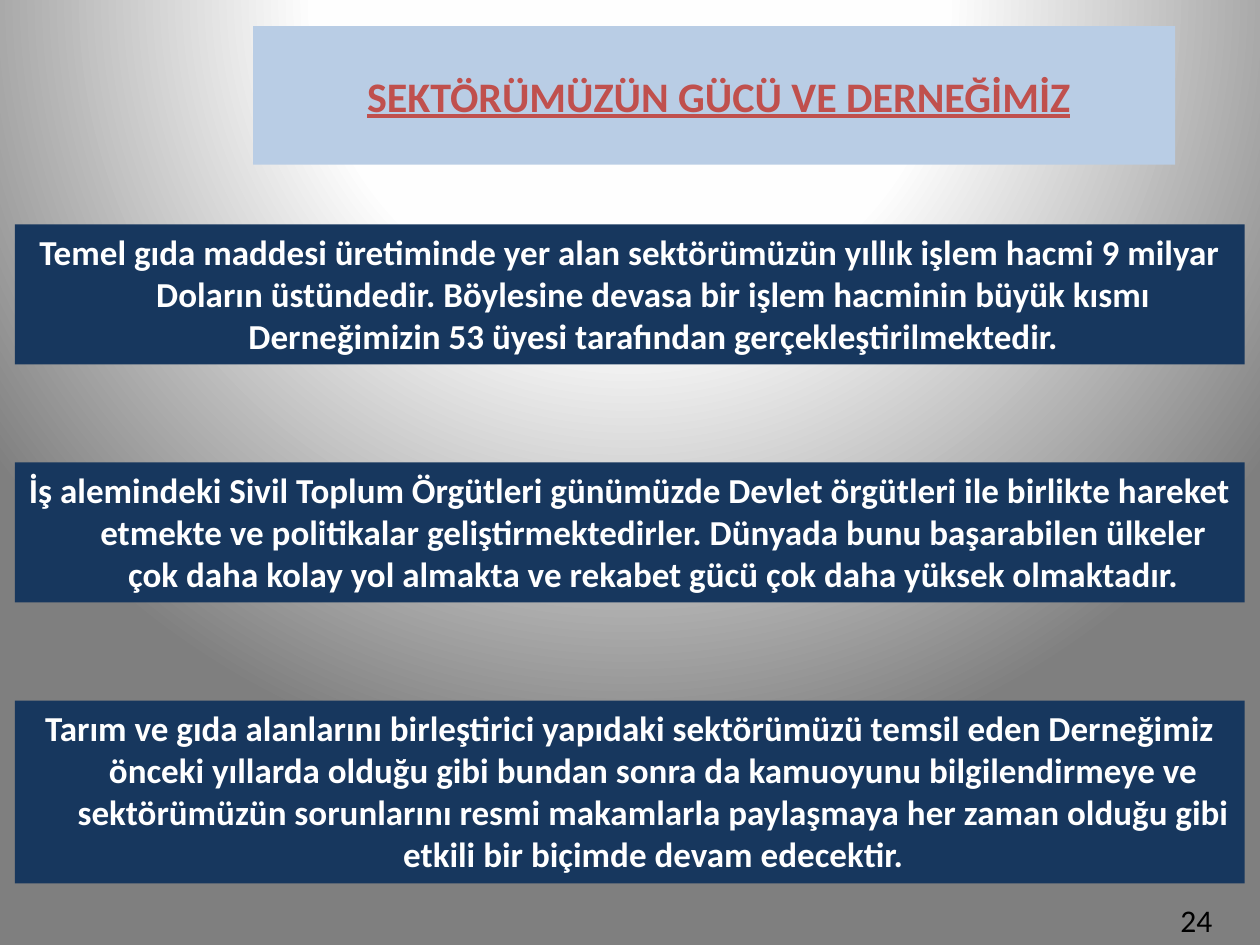
from typing import NamedTuple

from pptx import Presentation
from pptx.dml.color import RGBColor
from pptx.enum.shapes import MSO_SHAPE
from pptx.enum.text import MSO_ANCHOR, MSO_AUTO_SIZE, PP_ALIGN
from pptx.oxml import parse_xml
from pptx.oxml.ns import nsdecls
from pptx.util import Pt

COLORS = {
    "banner": "B9CDE5",
    "heading": "C0504D",
    "panel": "17375E",
    "panel_text": "FFFFFF",
    "number": "000000",
}
BACKDROP_STOPS = [(0, "FFFFFF"), (40, "FEFEFE"), (100, "7F7F7F")]
PANEL_LEFT, PANEL_TOP, PANEL_WIDTH, PANEL_STEP = 8.5, 128.2, 702.7, 136.1
HANGING_INDENT = 27


class Panel(NamedTuple):
    statement: str
    height: float


PANELS = [
    Panel("Temel gıda maddesi üretiminde yer alan sektörümüzün yıllık işlem hacmi "
          "9 milyar Doların üstündedir. Böylesine devasa bir işlem hacminin büyük "
          "kısmı Derneğimizin 53 üyesi tarafından gerçekleştirilmektedir.", 80),
    Panel("İş alemindeki Sivil Toplum Örgütleri günümüzde Devlet örgütleri ile "
          "birlikte hareket etmekte ve politikalar geliştirmektedirler. Dünyada bunu "
          "başarabilen ülkeler çok daha kolay yol almakta ve rekabet gücü çok daha "
          "yüksek olmaktadır.", 80),
    Panel("Tarım ve gıda alanlarını birleştirici yapıdaki sektörümüzü temsil eden "
          "Derneğimiz önceki yıllarda olduğu gibi bundan sonra da kamuoyunu "
          "bilgilendirmeye ve sektörümüzün sorunlarını resmi makamlarla paylaşmaya "
          "her zaman olduğu gibi etkili bir biçimde devam edecektir.", 104.4),
]


def write_text(shape, text: str, *, size: float, color: str, bold: bool = False,
               underline: bool = False, align=PP_ALIGN.LEFT,
               anchor=MSO_ANCHOR.TOP, hanging: float = 0) -> None:
    frame = shape.text_frame
    frame.word_wrap = True
    frame.auto_size = MSO_AUTO_SIZE.NONE
    frame.vertical_anchor = anchor
    paragraph = frame.paragraphs[0]
    paragraph.alignment = align
    if hanging:
        properties = paragraph._p.get_or_add_pPr()
        properties.set("marL", str(Pt(hanging)))
        properties.set("indent", str(-Pt(hanging)))
    run = paragraph.add_run()
    run.text = text
    font = run.font
    font.name, font.size = "Calibri", Pt(size)
    font.bold, font.underline = bold, underline
    font.color.rgb = RGBColor.from_string(COLORS[color])


def paint(shape, color: str) -> None:
    """Give the shape a plain fill and no outline."""
    shape.fill.solid()
    shape.fill.fore_color.rgb = RGBColor.from_string(COLORS[color])
    shape.line.fill.background()


def set_backdrop(slide) -> None:
    """Fill the background with a circular gradient centred above the slide."""
    stops = "".join(
        f'<a:gs pos="{percent * 1000}"><a:srgbClr val="{color}"/></a:gs>'
        for percent, color in BACKDROP_STOPS)
    background = parse_xml(
        f'<p:bg {nsdecls("p", "a")}><p:bgPr><a:gradFill rotWithShape="1">'
        f'<a:gsLst>{stops}</a:gsLst><a:path path="circle">'
        '<a:fillToRect l="50000" t="-80000" r="50000" b="180000"/></a:path>'
        '</a:gradFill><a:effectLst/></p:bgPr></p:bg>')
    slide.element.cSld.insert(0, background)


def add_heading(slide, text: str) -> None:
    heading = slide.shapes.title
    heading.left, heading.top = Pt(144.6), Pt(14.9)
    heading.width, heading.height = Pt(527), Pt(79.2)
    heading.element.spPr.append(parse_xml(
        f'<a:prstGeom {nsdecls("a")} prst="roundRect"><a:avLst/></a:prstGeom>'))
    paint(heading, "banner")
    write_text(heading, text, size=24, color="heading", bold=True, underline=True,
               align=PP_ALIGN.CENTER, anchor=MSO_ANCHOR.MIDDLE)
    heading.text_frame.margin_left = Pt(12.6)


def add_panel(slide, panel: Panel, top: float) -> None:
    box = slide.shapes.add_shape(MSO_SHAPE.RECTANGLE, Pt(PANEL_LEFT), Pt(top),
                                 Pt(PANEL_WIDTH), Pt(panel.height))
    box.shadow.inherit = False
    paint(box, "panel")
    write_text(box, panel.statement, size=20, color="panel_text", bold=True,
               align=PP_ALIGN.CENTER, hanging=HANGING_INDENT)


def main() -> None:
    presentation = Presentation()
    presentation.slide_width, presentation.slide_height = Pt(720), Pt(540)
    slide = presentation.slides.add_slide(presentation.slide_layouts[5])
    set_backdrop(slide)
    add_heading(slide, "SEKTÖRÜMÜZÜN GÜCÜ VE DERNEĞİMİZ")
    for row, panel in enumerate(PANELS):
        add_panel(slide, panel, PANEL_TOP + row * PANEL_STEP)
    page_number = slide.shapes.add_textbox(Pt(667.4), Pt(511.2), Pt(36.7), Pt(28.8))
    write_text(page_number, "24", size=18, color="number")
    presentation.save("out.pptx")


if __name__ == "__main__":
    main()
